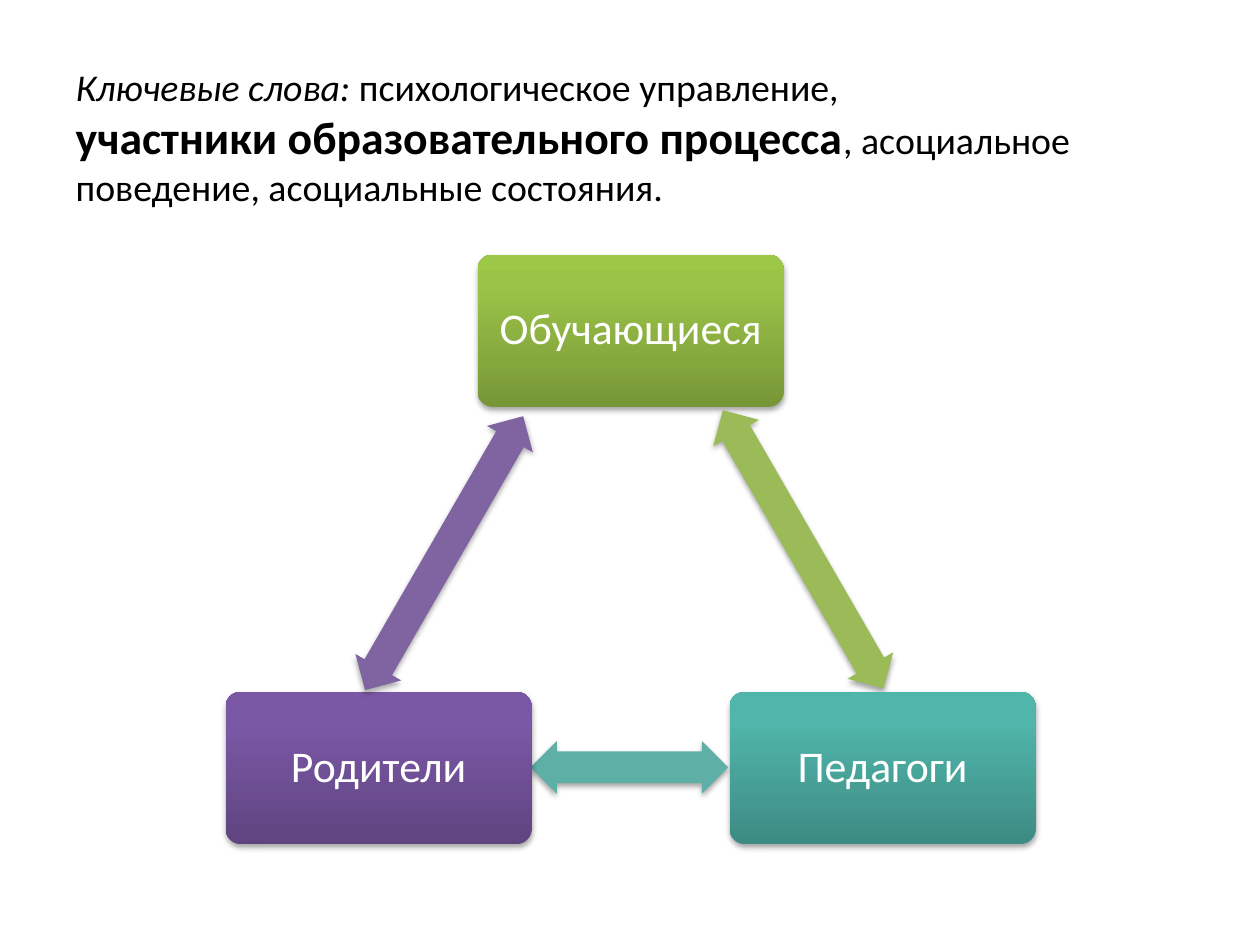
import copy
from dataclasses import dataclass

import lxml.etree
import pptx
import pptx.dml.color
import pptx.enum.shapes
import pptx.enum.text
import pptx.oxml
import pptx.oxml.ns
import pptx.util
from pptx.util import Inches

FONT = "Calibri"
BOX_WIDTH, BOX_HEIGHT = 2.43, 1.21
ARROW_HEIGHT = 0.42
TOP_ROW, BOTTOM_ROW = 2.02, 5.49
SHADOW = (
    '<a:effectLst xmlns:a="http://schemas.openxmlformats.org/drawingml/2006/main">'
    '<a:outerShdw blurRad="40000" dist="23000" dir="5400000" rotWithShape="0">'
    '<a:srgbClr val="000000"><a:alpha val="35000"/></a:srgbClr>'
    '</a:outerShdw></a:effectLst>'
)


@dataclass
class Participant:
    label: str
    left: float
    top: float
    shades: tuple[str, str, str]


@dataclass
class Relation:
    left: float
    top: float
    width: float
    rotation: int
    color: str


PARTICIPANTS = [
    Participant("Обучающиеся", 3.79, TOP_ROW, ("779737", "9BC348", "9DC746")),
    Participant("Педагоги", 5.79, BOTTOM_ROW, ("3D8B83", "50B5AA", "4EB8AC")),
    Participant("Родители", 1.79, BOTTOM_ROW, ("5F4480", "7B58A6", "7C57A8")),
]
RELATIONS = [
    Relation(5.1, 4.15, 2.55, 60, "9BBB59"),
    Relation(4.21, 5.88, 1.57, 180, "5EAFA6"),
    Relation(2.27, 4.18, 2.51, 300, "8064A2"),
]


def rgb(value: str) -> pptx.dml.color.RGBColor:
    return pptx.dml.color.RGBColor.from_string(value)


def add_text(paragraph, text: str, *, size: float, color: str = "000000",
             bold: bool = False, italic: bool = False) -> None:
    run = paragraph.add_run()
    run.text = text
    run.font.name = FONT
    run.font.size = pptx.util.Pt(size)
    run.font.color.rgb = rgb(color)
    run.font.bold = bold
    run.font.italic = italic


def add_figure(slide, kind, left: float, top: float, width: float, height: float,
               adjustments: tuple[float, ...]):
    figure = slide.shapes.add_shape(
        kind, Inches(left), Inches(top), Inches(width), Inches(height))
    for index, value in enumerate(adjustments):
        figure.adjustments[index] = value
    figure.line.fill.background()
    figure.element.spPr.append(pptx.oxml.parse_xml(SHADOW))
    return figure


def fill_gradient(figure, shades: tuple[str, str, str]) -> None:
    figure.fill.gradient()
    figure.fill.gradient_angle = 90
    stop_list = figure.element.spPr.find(".//" + pptx.oxml.ns.qn("a:gsLst"))
    stop_list.append(copy.deepcopy(stop_list[-1]))
    for stop, position, shade in zip(figure.fill.gradient_stops, (0, 0.8, 1), shades):
        stop.position = position
        stop.color.rgb = rgb(shade)


def add_participant(slide, participant: Participant) -> None:
    box = add_figure(slide, pptx.enum.shapes.MSO_SHAPE.ROUNDED_RECTANGLE,
                     participant.left, participant.top, BOX_WIDTH, BOX_HEIGHT, (0.1,))
    fill_gradient(box, participant.shades)
    frame = box.text_frame
    frame.word_wrap = True
    frame.vertical_anchor = pptx.enum.text.MSO_ANCHOR.MIDDLE
    frame.margin_left = frame.margin_right = Inches(0.1)
    frame.margin_top = frame.margin_bottom = Inches(0.1)
    paragraph = frame.paragraphs[0]
    paragraph.alignment = pptx.enum.text.PP_ALIGN.CENTER
    paragraph.line_spacing = 0.9
    add_text(paragraph, participant.label, size=25, color="FFFFFF")


def add_relation(slide, relation: Relation) -> None:
    arrow = add_figure(slide, pptx.enum.shapes.MSO_SHAPE.LEFT_RIGHT_ARROW,
                       relation.left, relation.top, relation.width, ARROW_HEIGHT, (0.6, 0.5))
    arrow.rotation = relation.rotation
    arrow.fill.solid()
    arrow.fill.fore_color.rgb = rgb(relation.color)


def write_keywords(slide) -> None:
    title = slide.shapes.title
    title.left, title.top = Inches(0.5), Inches(0.3)
    title.width, title.height = Inches(9), Inches(1.56)
    frame = title.text_frame
    frame.auto_size = pptx.enum.text.MSO_AUTO_SIZE.NONE
    frame.vertical_anchor = pptx.enum.text.MSO_ANCHOR.MIDDLE
    keywords = frame.paragraphs[0]
    keywords.alignment = pptx.enum.text.PP_ALIGN.LEFT
    add_text(keywords, "Ключевые слова:", size=21.6, italic=True)
    add_text(keywords, " психологическое управление, ", size=21.6)
    keywords.add_line_break()
    add_text(keywords, "участники образовательного процесса", size=26.1, bold=True)
    add_text(keywords, ", асоциальное поведение, асоциальные состояния.", size=21.6)


def main() -> None:
    presentation = pptx.Presentation()
    presentation.slide_width, presentation.slide_height = Inches(10), Inches(7.5)
    slide = presentation.slides.add_slide(presentation.slide_layouts[5])
    write_keywords(slide)
    for participant, relation in zip(PARTICIPANTS, RELATIONS):
        add_participant(slide, participant)
        add_relation(slide, relation)
    presentation.save("out.pptx")


if __name__ == "__main__":
    main()
